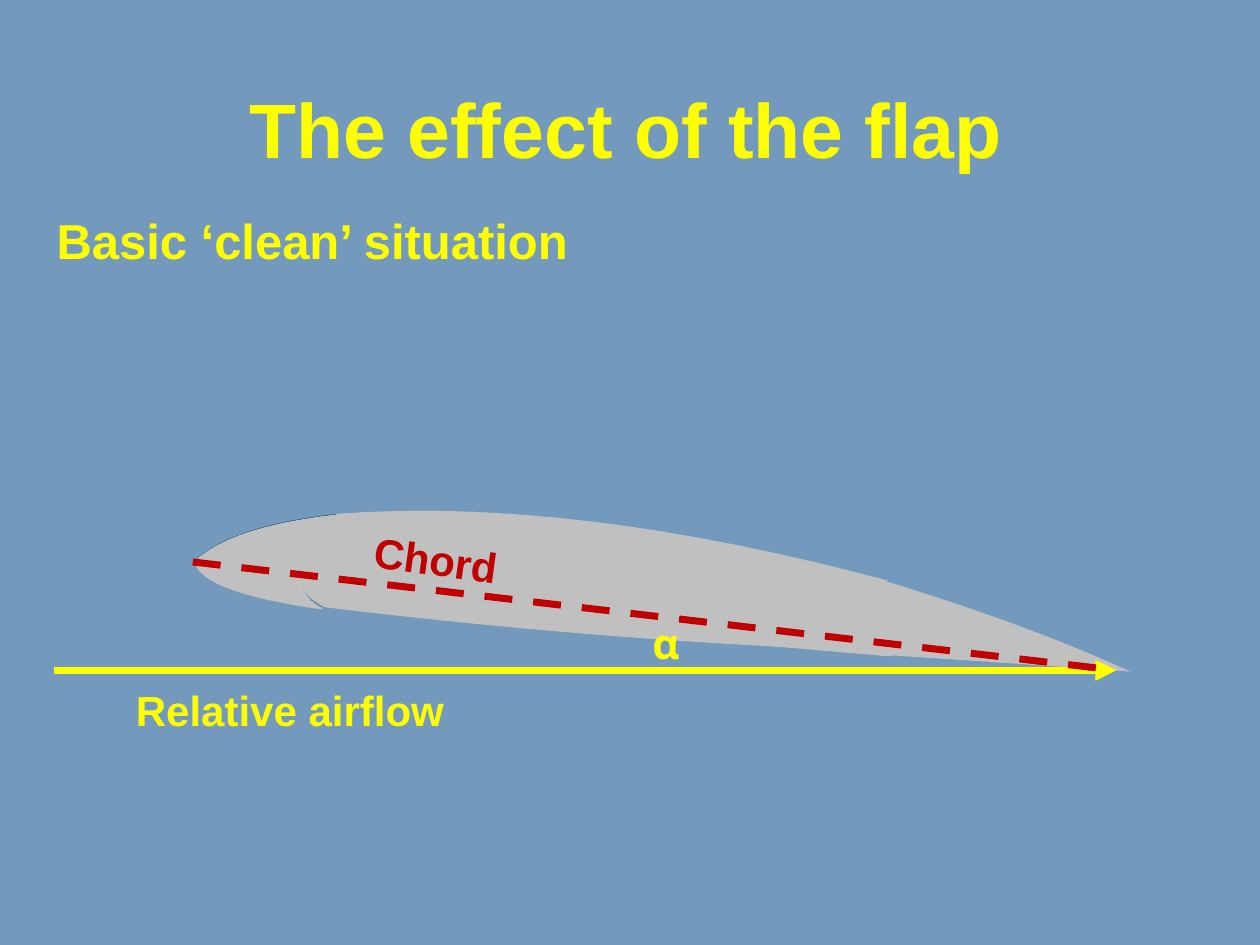
from dataclasses import dataclass
from math import cos, radians, sin

from lxml.etree import SubElement
from pptx import Presentation
from pptx.dml.color import RGBColor
from pptx.enum.dml import MSO_LINE
from pptx.enum.shapes import MSO_CONNECTOR
from pptx.enum.text import MSO_ANCHOR, MSO_AUTO_SIZE, PP_ALIGN
from pptx.oxml.ns import qn
from pptx.util import Inches, Pt


@dataclass(frozen=True)
class Theme:
    sky: str = "739ABC"
    text: str = "FFFF00"
    chord: str = "C00000"
    wing: str = "C0C0C0"
    shade: str = "002F5F"
    font: str = "Arial"
    symbol_font: str = "Comic Neue"
    title_size: int = 44
    subtitle_size: int = 28
    label_size: int = 24
    line_width: int = 4
    wing_tilt: float = 4.4


CURVE_STEPS = 16

# Each wing part is a ring of edges: an edge's start corner -> the point halfway along it.
# The edge ends at the next start corner.
MAIN_BODY = {
    (2.66, 4.08): (4.70, 4.14),  # upper surface
    (7.05, 4.61): (6.65, 4.84),  # socket for the flap
    (6.72, 5.16): (4.64, 5.03),  # lower surface
    (2.58, 4.82): (2.37, 4.52),  # joint with the nose
}
NOSE = {
    (1.55, 4.46): (1.97, 4.23),  # upper surface
    (2.67, 4.09): (2.39, 4.54),  # joint with the body
    (2.55, 4.83): (1.83, 4.67),  # lower surface
}
FLAP = {
    (6.92, 4.58): (8.04, 4.95),  # upper surface
    (8.97, 5.33): (7.80, 5.25),  # lower surface
    (6.74, 5.18): (6.59, 4.90),  # rounded front
}
FLAP_JOINT = {
    (4.84, 5.01): (5.91, 4.77),  # upper side
    (6.98, 4.59): (7.25, 4.87),  # rounded back
    (7.07, 5.21): (5.92, 5.11),  # lower side
}


def curve(start, via, end):
    """Sample a parabola from start to just before end that is at via halfway."""
    bend = [2 * v - (a + b) / 2 for a, v, b in zip(start, via, end)]
    for step in range(CURVE_STEPS):
        t = step / CURVE_STEPS
        yield tuple((1 - t) ** 2 * a + 2 * t * (1 - t) * c + t ** 2 * b
                    for a, c, b in zip(start, bend, end))


def outline(edges):
    corners = list(edges)
    ends = corners[1:] + corners[:1]
    return [point for start, end in zip(corners, ends)
            for point in curve(start, edges[start], end)]


def rotate(point, degrees):
    """Turn a point clockwise about the slide's top left corner."""
    x, y = point
    a = radians(degrees)
    return x * cos(a) - y * sin(a), x * sin(a) + y * cos(a)


class SlideBuilder:
    def __init__(self, slide, theme):
        self.s = slide
        self.theme = theme

    def background(self):
        fill = self.s.background.fill
        fill.solid()
        fill.fore_color.rgb = RGBColor.from_string(self.theme.sky)

    def _write(self, sp, text, size, color, font, **paragraph_format):
        p = sp.text_frame.paragraphs[0]
        r = p.add_run()
        r.text = text
        run_format = {"size": Pt(size), "bold": True, "name": font}
        for target, values in ((p, paragraph_format), (r.font, run_format)):
            for name, value in values.items():
                setattr(target, name, value)
        r.font.color.rgb = RGBColor.from_string(color)

    def title(self, text, box):
        sp = self.s.shapes.title
        for name, value in zip(("left", "top", "width", "height"), box):
            setattr(sp, name, Inches(value))
        sp.text_frame.word_wrap = False
        sp.text_frame.vertical_anchor = MSO_ANCHOR.MIDDLE
        self._write(sp, text, self.theme.title_size, self.theme.text, self.theme.font,
                    alignment=PP_ALIGN.CENTER, line_spacing=0.9)

    def label(self, text, box, size=None, color=None, font=None, rotation=0):
        t = self.theme
        sp = self.s.shapes.add_textbox(*map(Inches, box))
        sp.rotation = rotation
        sp.text_frame.word_wrap = True
        sp.text_frame.auto_size = MSO_AUTO_SIZE.SHAPE_TO_FIT_TEXT
        self._write(sp, text, size or t.label_size, color or t.text, font or t.font)

    def wing_part(self, edges, color, outlined=False, raised=0):
        """Level the tilted outline, build it, then tilt the shape back into place."""
        tilt = self.theme.wing_tilt
        level = [tuple(map(Inches, rotate((x, y - raised), -tilt)))
                 for x, y in outline(edges)]
        builder = self.s.shapes.build_freeform(*level[0])
        builder.add_line_segments(level[1:], close=True)
        sp = builder.convert_to_shape()
        cx, cy = rotate((sp.left + sp.width / 2, sp.top + sp.height / 2), tilt)
        sp.left, sp.top = round(cx - sp.width / 2), round(cy - sp.height / 2)
        sp.rotation = tilt
        sp.shadow.inherit = False
        sp.fill.solid()
        sp.fill.fore_color.rgb = RGBColor.from_string(color)
        if outlined:
            sp.line.color.rgb = RGBColor.from_string(color)
            sp.line.width = Pt(1)
        else:
            sp.line.fill.background()

    def line(self, start, end, color, dash=None, arrow=False):
        sp = self.s.shapes.add_connector(
            MSO_CONNECTOR.STRAIGHT, *map(Inches, start + end))
        sp.line.color.rgb = RGBColor.from_string(color)
        sp.line.width = Pt(self.theme.line_width)
        if dash:
            sp.line.dash_style = dash
        sp_pr = sp._element.spPr
        if arrow:
            SubElement(sp_pr.find(qn("a:ln")), qn("a:tailEnd"), type="triangle")
        SubElement(sp_pr, qn("a:effectLst"))


def main():
    prs = Presentation()
    prs.slide_width, prs.slide_height = Inches(10), Inches(7.5)
    theme = Theme()
    b = SlideBuilder(prs.slides.add_slide(prs.slide_layouts[5]), theme)
    b.background()

    b.wing_part(MAIN_BODY, theme.wing)
    b.wing_part(NOSE, theme.shade, raised=0.01)
    b.wing_part(NOSE, theme.wing, outlined=True)
    b.wing_part(FLAP, theme.wing)
    b.wing_part(FLAP_JOINT, theme.wing)

    b.title("The effect of the flap", (1.85, 0.68, 6.24, 0.76))
    trailing_edge = (8.86, 5.32)
    b.line((0.43, 5.32), trailing_edge, theme.text, arrow=True)
    b.line((1.53, 4.46), trailing_edge, theme.chord, dash=MSO_LINE.DASH)

    b.label("Relative airflow", (0.98, 5.38, 3.78, 0.5))
    b.label("Chord", (2.87, 4.2, 1.34, 0.5), color=theme.chord, rotation=8)
    b.label("Basic ‘clean’ situation", (0.35, 1.62, 8.11, 0.57), size=theme.subtitle_size)
    b.label("α", (5.08, 4.85, 1.65, 0.5), font=theme.symbol_font)

    prs.save("out.pptx")


if __name__ == "__main__":
    main()
